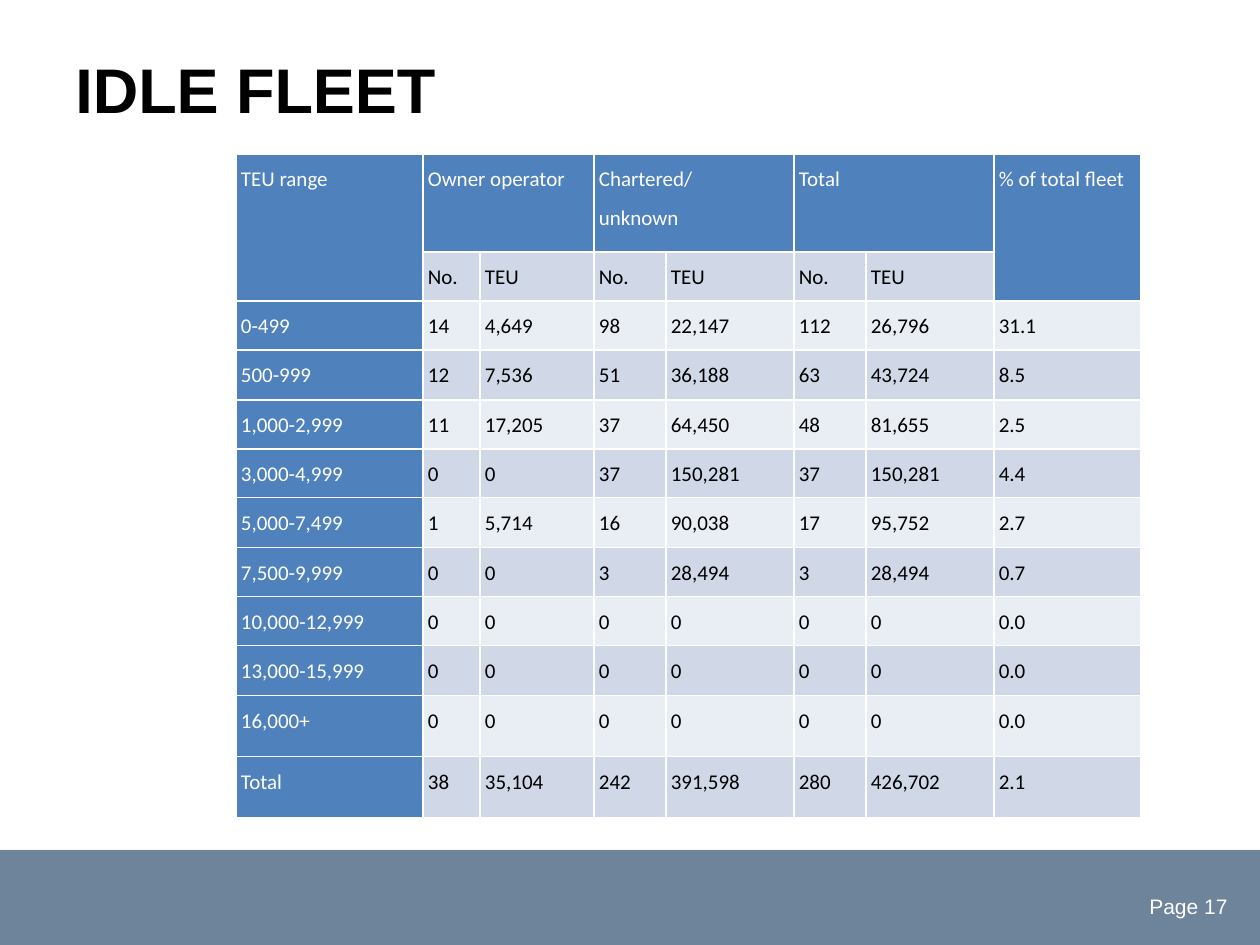
from lxml.etree import SubElement
from pptx import Presentation
from pptx.dml.color import RGBColor
from pptx.enum.shapes import MSO_SHAPE
from pptx.enum.text import MSO_ANCHOR, PP_ALIGN
from pptx.oxml import parse_xml
from pptx.oxml.ns import nsdecls, qn
from pptx.util import Emu, Pt

COLORS = {
    "black": "000000",
    "white": "FFFFFF",
    "footer": "6D849A",
    "header": "4F81BD",
    "dark_band": "D0D8E8",
    "light_band": "E9EDF4",
}
COLUMN_WIDTHS = [187, 57, 114, 72, 128, 72, 128, 147]
ROW_HEIGHTS = [98] + [49, 49, 50] * 3 + [61, 61]
MERGES = [(0, 0, 1, 0), (0, 1, 0, 2), (0, 3, 0, 4), (0, 5, 0, 6), (0, 7, 1, 7)]
IDLE_FLEET = [
    ["TEU range", "Owner operator", "", "Chartered/\nunknown", "", "Total", "", "% of total fleet"],
    ["", "No.", "TEU", "No.", "TEU", "No.", "TEU", ""],
    ["0-499", "14", "4,649", "98", "22,147", "112", "26,796", "31.1"],
    ["500-999", "12", "7,536", "51", "36,188", "63", "43,724", "8.5"],
    ["1,000-2,999", "11", "17,205", "37", "64,450", "48", "81,655", "2.5"],
    ["3,000-4,999", "0", "0", "37", "150,281", "37", "150,281", "4.4"],
    ["5,000-7,499", "1", "5,714", "16", "90,038", "17", "95,752", "2.7"],
    ["7,500-9,999", "0", "0", "3", "28,494", "3", "28,494", "0.7"],
    ["10,000-12,999", "0", "0", "0", "0", "0", "0", "0.0"],
    ["13,000-15,999", "0", "0", "0", "0", "0", "0", "0.0"],
    ["16,000+", "0", "0", "0", "0", "0", "0", "0.0"],
    ["Total", "38", "35,104", "242", "391,598", "280", "426,702", "2.1"],
]


def px(length):
    return Emu(round(length * 914400 / 126))


def rgb(name):
    return RGBColor.from_string(COLORS[name])


class SlideBuilder:
    heading_font = "Arial"
    table_font = "Calibri"

    def __init__(self, slide):
        self.slide = slide

    def add_run(self, paragraph, text, font, size, color, bold=False):
        run = paragraph.add_run()
        run.text = text
        run.font.name = font
        run.font.size = Pt(size)
        run.font.bold = bold
        run.font.color.rgb = rgb(color)

    def add_bar(self, left, top, width, height, color):
        shape = self.slide.shapes.add_shape(
            MSO_SHAPE.RECTANGLE, px(left), px(top), px(width), px(height))
        shape.fill.solid()
        shape.fill.fore_color.rgb = rgb(color)
        shape.line.fill.background()
        shape.shadow.inherit = False
        effects = shape._element.spPr.find(qn("a:effectLst"))
        shadow = SubElement(effects, qn("a:outerShdw"), blurRad=str(Pt(3.1)),
                            dist=str(Pt(1.8)), dir="5400000", rotWithShape="0")
        shadow_color = SubElement(shadow, qn("a:srgbClr"), val=COLORS["black"])
        SubElement(shadow_color, qn("a:alpha"), val="35000")

    def add_text(self, left, top, width, height, text, size, color,
                 align=PP_ALIGN.LEFT, bold=False, inset_top=6):
        box = self.slide.shapes.add_textbox(px(left), px(top), px(width), px(height))
        frame = box.text_frame
        frame.word_wrap = True
        frame.vertical_anchor = MSO_ANCHOR.TOP
        frame.margin_top = px(inset_top)
        paragraph = frame.paragraphs[0]
        paragraph.alignment = align
        self.add_run(paragraph, text, self.heading_font, size, color, bold)

    def style_cell(self, cell, fill):
        cell.margin_left = cell.margin_right = px(5)
        cell.margin_top = cell.margin_bottom = 0
        cell.fill.solid()
        cell.fill.fore_color.rgb = rgb(fill)
        properties = cell._tc.get_or_add_tcPr()
        for index, side in enumerate(("lnL", "lnR", "lnT", "lnB")):
            properties.insert(index, parse_xml(
                f'<a:{side} {nsdecls("a")} w="{Pt(1)}"><a:solidFill>'
                f'<a:srgbClr val="{COLORS["white"]}"/></a:solidFill></a:{side}>'))

    def fill_cell(self, cell, text, color):
        frame = cell.text_frame
        for index, line in enumerate(text.split("\n")):
            paragraph = frame.add_paragraph() if index else frame.paragraphs[0]
            paragraph.alignment = PP_ALIGN.JUSTIFY
            paragraph.line_spacing = 1.5
            self.add_run(paragraph, line, self.table_font, 12, color)

    def add_table(self, left, top, rows, widths, heights, merges):
        table = self.slide.shapes.add_table(
            len(rows), len(widths), px(left), px(top),
            px(sum(widths)), px(sum(heights))).table
        table.first_row = table.horz_banding = False
        for column, width in zip(table.columns, widths):
            column.width = px(width)
        for row, height in zip(table.rows, heights):
            row.height = px(height)
        for first_row, first_column, last_row, last_column in merges:
            table.cell(first_row, first_column).merge(table.cell(last_row, last_column))
        for row_index, row in enumerate(rows):
            band = "dark_band" if row_index % 2 else "light_band"
            for column_index, text in enumerate(row):
                cell = table.cell(row_index, column_index)
                is_header = row_index == 0 or column_index == 0
                self.style_cell(cell, "header" if is_header else band)
                if text:
                    self.fill_cell(cell, text, "white" if is_header else "black")


def main():
    presentation = Presentation()
    presentation.slide_width = px(1260)
    presentation.slide_height = px(945)
    builder = SlideBuilder(presentation.slides.add_slide(presentation.slide_layouts[6]))
    builder.add_bar(0, 850, 1260, 95, "footer")
    builder.add_text(776, 888, 464, 50, "Page 17", 12, "white", PP_ALIGN.RIGHT)
    builder.add_text(63, 38, 1134, 158, "IDLE FLEET", 36, "black", bold=True, inset_top=13)
    builder.add_table(236, 154, IDLE_FLEET, COLUMN_WIDTHS, ROW_HEIGHTS, MERGES)
    presentation.save("out.pptx")


if __name__ == "__main__":
    main()
